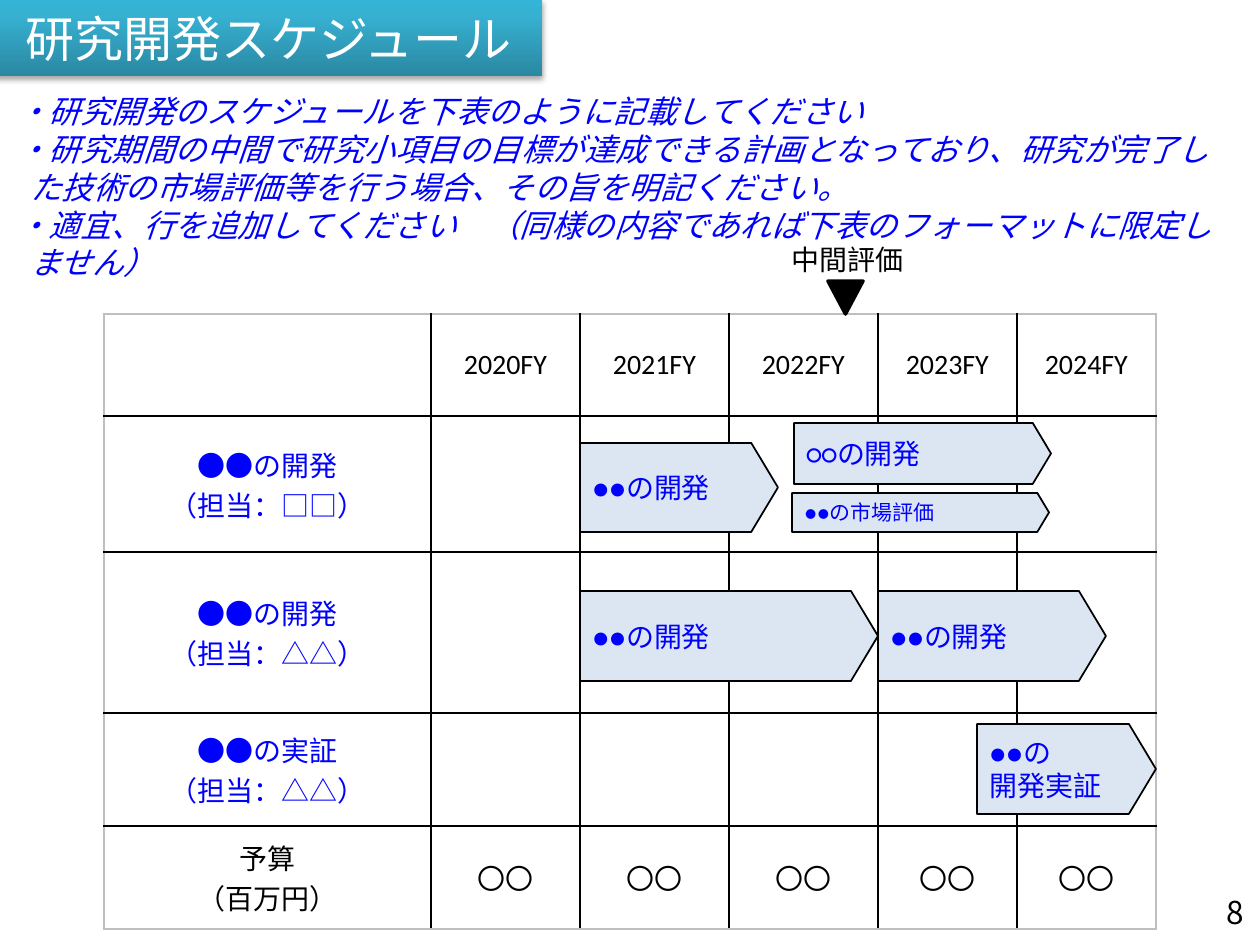
from dataclasses import dataclass

from lxml import etree
from pptx import Presentation
from pptx import util as u
from pptx.dml.color import RGBColor
from pptx.enum import shapes, text
from pptx.oxml import parse_xml
from pptx.oxml.ns import qn

BLACK = RGBColor(0x00, 0x00, 0x00)
WHITE = RGBColor(0xFF, 0xFF, 0xFF)
BLUE = RGBColor(0x00, 0x00, 0xFF)
PALE_BLUE = RGBColor(0xDC, 0xE6, 0xF2)
GRAY = RGBColor(0xBF, 0xBF, 0xBF)
LATIN = "Calibri"
JAPANESE = "Noto Sans CJK JP"
A_NS = "http://schemas.openxmlformats.org/drawingml/2006/main"
ALIGN = text.PP_ALIGN


@dataclass(frozen=True)
class Style:
    size: int
    color: RGBColor
    font: str = LATIN
    italic: bool = False
    align: ALIGN = ALIGN.LEFT
    hanging: bool = False


@dataclass(frozen=True)
class Area:
    left: int
    top: int
    width: int
    height: int


@dataclass(frozen=True)
class Task:
    area: Area
    lines: tuple[str, ...]
    size: int = 16


def px(length: int) -> u.Emu:
    """126 px to the inch."""
    return u.Emu(round(length * 914400 / 126))


def place(area: Area) -> tuple[u.Emu, ...]:
    return px(area.left), px(area.top), px(area.width), px(area.height)


def write(frame, lines: tuple[str, ...], style: Style) -> None:
    for index, line in enumerate(lines):
        para = frame.paragraphs[0] if index == 0 else frame.add_paragraph()
        para.alignment = style.align
        if style.hanging:
            props = para._p.get_or_add_pPr()
            props.set("marL", "91440")
            props.set("indent", "-91440")
        span = para.add_run()
        span.text = line
        span.font.size = u.Pt(style.size)
        span.font.italic = style.italic
        span.font.name = style.font
        span.font.color.rgb = style.color
        east_asian = etree.SubElement(span._r.get_or_add_rPr(), qn("a:ea"))
        east_asian.set("typeface", style.font)


def add_text(page, area: Area, lines: tuple[str, ...], style: Style, wrap: bool = False):
    frame = page.shapes.add_textbox(*place(area)).text_frame
    frame.word_wrap = wrap
    write(frame, lines, style)
    return frame


def add_block(page, kind, area: Area, fill: RGBColor, line_width: float):
    box = page.shapes.add_shape(kind, *place(area))
    box.shadow.inherit = False
    box.fill.solid()
    box.fill.fore_color.rgb = fill
    box.line.color.rgb = BLACK
    box.line.width = u.Pt(line_width)
    return box


def add_task(page, task: Task) -> None:
    box = add_block(page, shapes.MSO_SHAPE.PENTAGON, task.area, PALE_BLUE, 1)
    box.adjustments[0] = 0.3
    box.text_frame.word_wrap = True
    box.text_frame.vertical_anchor = text.MSO_ANCHOR.MIDDLE
    write(box.text_frame, task.lines, Style(task.size, BLUE, hanging=True))


def add_title(page, area: Area, title: str) -> None:
    box = page.shapes.add_shape(shapes.MSO_SHAPE.RECTANGLE, *place(area))
    box.line.fill.background()
    props = box._element.spPr
    stops = "".join(
        f'<a:gs pos="{pos}000"><a:srgbClr val="{color}"/></a:gs>'
        for pos, color in ((0, "2A88A2"), (80, "37B1D2"), (100, "34B4D6"))
    )
    gradient = parse_xml(
        f'<a:gradFill xmlns:a="{A_NS}" rotWithShape="1"><a:gsLst>{stops}</a:gsLst>'
        '<a:lin ang="16200000" scaled="0"/></a:gradFill>'
    )
    props.find(qn("a:prstGeom")).addnext(gradient)
    props.append(parse_xml(
        f'<a:effectLst xmlns:a="{A_NS}"><a:outerShdw blurRad="39370" dist="22860" '
        'dir="5400000" rotWithShape="0"><a:srgbClr val="000000">'
        '<a:alpha val="35000"/></a:srgbClr></a:outerShdw></a:effectLst>'
    ))
    box.text_frame.vertical_anchor = text.MSO_ANCHOR.MIDDLE
    write(box.text_frame, (title,), Style(28, WHITE, align=ALIGN.CENTER))


def set_border(cell, side: str, color: RGBColor, width: float) -> None:
    cell._tc.get_or_add_tcPr().append(parse_xml(
        f'<a:{side} xmlns:a="{A_NS}" w="{u.Pt(width)}"><a:solidFill>'
        f'<a:srgbClr val="{color}"/></a:solidFill></a:{side}>'
    ))


def add_schedule(page, left: int, top: int, widths, heights, rows) -> None:
    area = Area(left, top, sum(widths), sum(heights))
    table = page.shapes.add_table(len(heights), len(widths), *place(area)).table
    table.first_row = table.horz_banding = False
    for column, width in zip(table.columns, widths):
        column.width = px(width)
    last_row, last_col = len(heights) - 1, len(widths) - 1
    for r, (height, contents) in enumerate(zip(heights, rows)):
        table.rows[r].height = px(height)
        for c, lines in enumerate(contents):
            cell = table.cell(r, c)
            cell.margin_left = cell.margin_right = 0
            cell.margin_top = cell.margin_bottom = 0
            cell.vertical_anchor = text.MSO_ANCHOR.MIDDLE
            outer_sides = {"lnL": c == 0, "lnR": c == last_col,
                           "lnT": r == 0, "lnB": r == last_row}
            for side, outer in outer_sides.items():
                set_border(cell, side, GRAY if outer else BLACK, 1.5 if outer else 1)
            cell.fill.background()
            color = BLUE if c == 0 and r < last_row else BLACK
            font = LATIN if r == 0 else JAPANESE
            write(cell.text_frame, lines, Style(16, color, font, align=ALIGN.CENTER))


YEARS = range(2020, 2025)
NO_ENTRIES = [()] * len(YEARS)
ROWS = [
    [(), *((f"{year}FY",) for year in YEARS)],
    [("●●の開発", "（担当：□□）"), *NO_ENTRIES],
    [("●●の開発", "（担当：△△）"), *NO_ENTRIES],
    [("●●の実証", "（担当：△△）"), *NO_ENTRIES],
    [("予算", "（百万円）"), *[("〇〇",)] * len(YEARS)],
]
TASKS = [
    Task(Area(792, 493, 257, 39), ("●●の市場評価",), 12),
    Task(Area(878, 591, 228, 90), ("●●の開発",)),
    Task(Area(580, 443, 198, 89), ("●●の開発",)),
    Task(Area(580, 591, 298, 90), ("●●の開発",)),
    Task(Area(977, 724, 179, 90), ("●●の", "開発実証")),
    Task(Area(794, 423, 257, 61), ("○○の開発",)),
]
GUIDANCE = (
    "・研究開発のスケジュールを下表のように記載してください",
    "・研究期間の中間で研究小項目の目標が達成できる計画となっており、"
    "研究が完了した技術の市場評価等を行う場合、その旨を明記ください。",
    "・適宜、行を追加してください　（同様の内容であれば下表のフォーマットに限定しません）",
)


def main() -> None:
    deck = Presentation()
    deck.slide_width, deck.slide_height = px(1260), px(945)
    page = deck.slides.add_slide(deck.slide_layouts[6])

    # Title and schedule grid
    add_title(page, Area(-5, -1, 547, 77), "研究開発スケジュール")
    add_schedule(page, 104, 314, (327, 149, 149, 149, 139, 139),
                 (102, 136, 161, 113, 103), ROWS)

    # Task arrows
    for task in TASKS:
        add_task(page, task)

    # Midterm evaluation marker
    marker = add_block(page, shapes.MSO_SHAPE.ISOSCELES_TRIANGLE,
                       Area(828, 281, 35, 33), BLACK, 2)
    marker.rotation = 180
    add_text(page, Area(779, 236, 139, 47), ("中間評価",), Style(16, BLACK))

    # Guidance and page number
    add_text(page, Area(5, 86, 1239, 165), GUIDANCE,
             Style(18, BLUE, italic=True, hanging=True), wrap=True)
    number = add_text(page, Area(1171, 896, 73, 32), ("8",),
                      Style(18, BLACK, JAPANESE, align=ALIGN.RIGHT))
    number.margin_left = number.margin_right = 0
    number.margin_top = number.margin_bottom = 0
    number.vertical_anchor = text.MSO_ANCHOR.MIDDLE

    deck.save("out.pptx")


if __name__ == "__main__":
    main()
